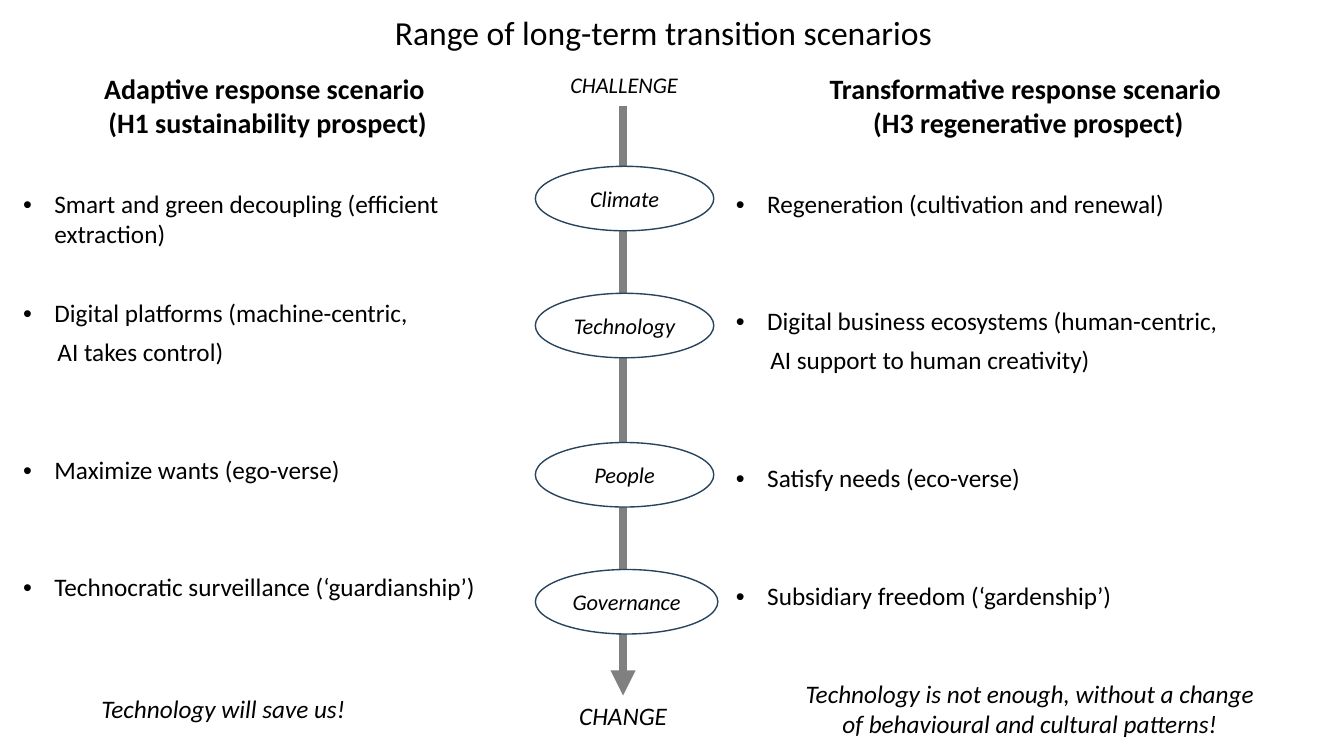
"""Build a slide that compares two long-term transition scenarios."""
from lxml import etree
from pptx import Presentation
from pptx import util as u
from pptx.dml.color import RGBColor
from pptx.enum import shapes, text
from pptx.oxml.ns import qn

BLACK = RGBColor(0x00, 0x00, 0x00)
WHITE = RGBColor(0xFF, 0xFF, 0xFF)
GREY = RGBColor(0x80, 0x80, 0x80)
NAVY = RGBColor(0x28, 0x44, 0x5D)

EMU_PER_PX = 9144
NO_GRID_STYLE = "{2D5ABB26-0587-4C30-8999-92F81FD0307C}"
LINE_GAP = 6
WIDE_GAP = 34
TOPIC_GAP = 62

ADAPTIVE = [
    ("Smart and green decoupling (efficient extraction)", True, WIDE_GAP),
    ("Digital platforms (machine-centric,", True, LINE_GAP),
    ("AI takes control)", False, TOPIC_GAP),
    ("Maximize wants (ego-verse)", True, TOPIC_GAP),
    ("Technocratic surveillance (‘guardianship’)", True, LINE_GAP),
]
TRANSFORMATIVE = [
    ("Regeneration (cultivation and renewal)", True, TOPIC_GAP),
    ("Digital business ecosystems (human-centric,", True, LINE_GAP),
    ("AI support to human creativity)", False, TOPIC_GAP),
    ("Satisfy needs (eco-verse)", True, TOPIC_GAP),
    ("Subsidiary freedom (‘gardenship’)", True, LINE_GAP),
]
HEADINGS = [
    (["Adaptive response scenario ", "(H1 sustainability prospect)"], 20, True),
    (["CHALLENGE"], 16, False),
    (["Transformative response scenario ", "(H3 regenerative prospect)"], 20, True),
]
STAGES = [
    ("Climate", 165, 177),
    ("Technology", 291, 177),
    ("People", 439, 177),
    ("Governance", 565, 181),
]


def px(length):
    return u.Emu(length * EMU_PER_PX)


class ScenarioSlide:
    font = "Calibri"

    def __init__(self, presentation):
        self.slide = presentation.slides.add_slide(presentation.slide_layouts[5])

    def add_lines(self, frame, lines, size, bold=False, italic=False):
        for index, line in enumerate(lines):
            paragraph = frame.paragraphs[0] if index == 0 else frame.add_paragraph()
            paragraph.alignment = text.PP_ALIGN.CENTER
            self.add_run(paragraph, line, size, bold, italic)

    def add_run(self, paragraph, words, size, bold=False, italic=False):
        run = paragraph.add_run()
        run.text = words
        run.font.name = self.font
        run.font.size = u.Pt(size)
        run.font.bold = bold
        run.font.italic = italic
        run.font.color.rgb = BLACK

    def title(self, words, left, top, width, height):
        shape = self.slide.shapes.title
        shape.left, shape.top = px(left), px(top)
        shape.width, shape.height = px(width), px(height)
        shape.text_frame.vertical_anchor = text.MSO_ANCHOR.MIDDLE
        self.add_lines(shape.text_frame, [words], 24)
        shape.text_frame.paragraphs[0].line_spacing = 0.9

    def caption(self, lines, left, top, width, height):
        shape = self.slide.shapes.add_textbox(px(left), px(top), px(width), px(height))
        shape.text_frame.word_wrap = True
        shape.text_frame.auto_size = text.MSO_AUTO_SIZE.SHAPE_TO_FIT_TEXT
        self.add_lines(shape.text_frame, lines, 18, italic=True)
        return shape

    def arrow_to(self, target, x, top):
        connector = self.slide.shapes.add_connector(
            shapes.MSO_CONNECTOR.STRAIGHT, px(x), px(top), px(x), target.top)
        connector.end_connect(target, 0)
        connector.line.color.rgb = GREY
        connector.line.width = u.Pt(6)
        line = connector.line._get_or_add_ln()
        etree.SubElement(line, qn("a:tailEnd"), type="triangle")
        etree.SubElement(connector._element.spPr, qn("a:effectLst"))

    def stage(self, name, left, top, width, height):
        shape = self.slide.shapes.add_shape(
            shapes.MSO_SHAPE.OVAL, px(left), px(top), px(width), px(height))
        shape.shadow.inherit = False
        shape.fill.solid()
        shape.fill.fore_color.rgb = WHITE
        shape.line.color.rgb = NAVY
        shape.line.width = u.Pt(1)
        frame = shape.text_frame
        frame.margin_left = frame.margin_right = 0
        frame.vertical_anchor = text.MSO_ANCHOR.MIDDLE
        self.add_lines(frame, [name], 16, italic=True)

    def table(self, left, top, columns, rows):
        frame = self.slide.shapes.add_table(
            len(rows), len(columns), px(left), px(top), px(sum(columns)), px(sum(rows)))
        table = frame.table
        table.first_row = table.horz_banding = False
        table._tbl.tblPr.find(qn("a:tableStyleId")).text = NO_GRID_STYLE
        for column, width in zip(table.columns, columns):
            column.width = px(width)
        for row, height in zip(table.rows, rows):
            row.height = px(height)
        for cell in table.iter_cells():
            cell.fill.background()
        return table

    def bullets(self, cell, items):
        cell.margin_top = px(44)
        for index, (words, bulleted, gap) in enumerate(items):
            frame = cell.text_frame
            paragraph = frame.paragraphs[0] if index == 0 else frame.add_paragraph()
            paragraph.space_after = u.Pt(gap)
            properties = paragraph._p.get_or_add_pPr()
            properties.set("marL", str(px(31 if bulleted else 34)))
            properties.set("indent", str(px(-31 if bulleted else 0)))
            if bulleted:
                etree.SubElement(properties, qn("a:buFont"), typeface="Arial")
                etree.SubElement(properties, qn("a:buChar"), char="•")
            else:
                etree.SubElement(properties, qn("a:buNone"))
            self.add_run(paragraph, words, 18)


def main():
    presentation = Presentation()
    presentation.slide_width, presentation.slide_height = px(1333), px(750)
    scenario = ScenarioSlide(presentation)
    scenario.title("Range of long-term transition scenarios", 83, 9, 1150, 50)

    change = scenario.caption(["CHANGE"], 524, 690, 188, 41)
    scenario.arrow_to(change, 618, 105)

    table = scenario.table(13, 67, [505, 202, 600], [61, 535])
    for column, (lines, size, bold) in enumerate(HEADINGS):
        scenario.add_lines(table.cell(0, column).text_frame, lines, size, bold, not bold)
    scenario.bullets(table.cell(1, 0), ADAPTIVE)
    scenario.bullets(table.cell(1, 2), TRANSFORMATIVE)

    scenario.caption(["Technology is not enough, without a change",
                      "of behavioural and cultural patterns!"], 765, 668, 513, 71)
    scenario.caption(["Technology will save us!"], 83, 683, 277, 40)
    for name, top, width in STAGES:
        scenario.stage(name, 531, top, width, 64)

    presentation.save("out.pptx")


if __name__ == "__main__":
    main()
